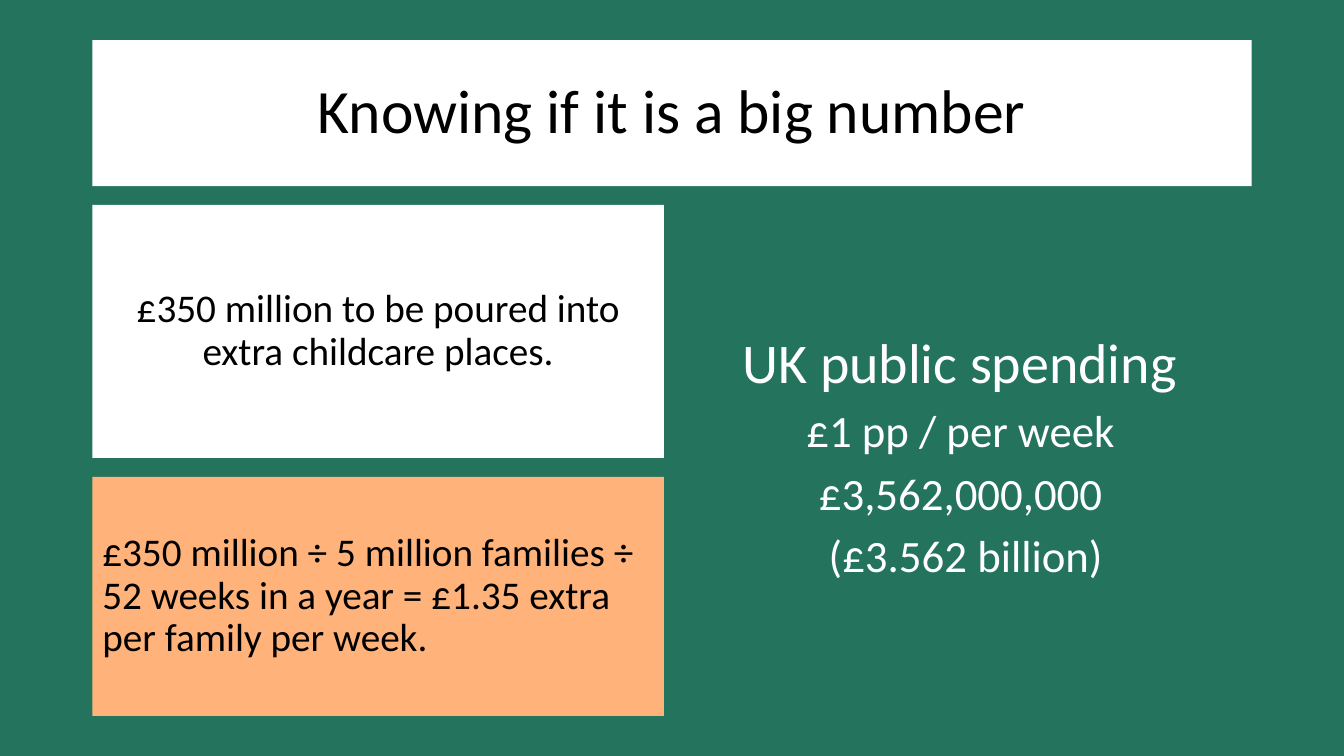
from collections import namedtuple
from dataclasses import dataclass

from lxml import etree
from pptx import Presentation, util as u
from pptx.dml.color import RGBColor
from pptx.enum import text as t
from pptx.oxml.ns import qn

Box = namedtuple("Box", "left top width height")


@dataclass(frozen=True)
class Theme:
    green: str = "23735D"
    orange: str = "FFB37A"
    white: str = "FFFFFF"
    black: str = "000000"
    font: str = "Calibri"
    title: int = 44
    head: int = 40
    figure: int = 32
    body: int = 28


THEME = Theme()


def apply(item, values):
    """Set each named attribute of item."""
    for name, value in values.items():
        setattr(item, name, value)


def paint(fill, tone):
    fill.solid()
    fill.fore_color.rgb = RGBColor.from_string(tone)


def place(shape, box, tone):
    """Move a shape to box (in cm), fill it and centre its text vertically."""
    apply(shape, {name: u.Cm(size) for name, size in box._asdict().items()})
    paint(shape.fill, tone)
    apply(shape.text_frame, {
        "word_wrap": True,
        "auto_size": t.MSO_AUTO_SIZE.NONE,
        "vertical_anchor": t.MSO_ANCHOR.MIDDLE,
    })


def write(frame, lines, ink, align=t.PP_ALIGN.CENTER):
    """Fill a frame with unbulleted (words, size) lines."""
    for i, (words, size) in enumerate(lines):
        para = frame.add_paragraph() if i else frame.paragraphs[0]
        para.text = words
        apply(para, {
            "alignment": align,
            "line_spacing": 0.9,
            "space_before": u.Pt(10 if i else 0),
            "space_after": u.Pt(0),
        })
        props = para._p.get_or_add_pPr()
        apply_indent = {"marL": "0", "indent": "0"}
        for name, value in apply_indent.items():
            props.set(name, value)
        etree.SubElement(props, qn("a:buNone"))
        font = para.runs[0].font
        apply(font, {"name": THEME.font, "size": u.Pt(size), "bold": False})
        font.color.rgb = RGBColor.from_string(ink)


def banner(slide, box):
    title = slide.shapes.title
    place(title, box, THEME.white)
    write(title.text_frame,
          [("Knowing if it is a big number", THEME.title)], THEME.black)


def claim(slide, box):
    body = slide.placeholders[1]
    place(body, box, THEME.white)
    write(body.text_frame,
          [("£350 million to be poured into extra childcare places.",
            THEME.body)], THEME.black)


def working(slide, box):
    note = slide.shapes.add_textbox(0, 0, 0, 0)
    place(note, box, THEME.orange)
    write(note.text_frame,
          [("£350 million ÷ 5 million families ÷ 52 weeks in a year = "
            "£1.35 extra per family per week.", THEME.body)],
          THEME.black, t.PP_ALIGN.LEFT)


def spending(slide, box):
    body = slide.placeholders[2]
    place(body, box, THEME.green)
    write(body.text_frame, [
        ("UK public spending ", THEME.head),
        ("£1 pp / per week ", THEME.figure),
        ("£3,562,000,000 ", THEME.figure),
        ("(£3.562 billion)", THEME.figure),
    ], THEME.white)


def main():
    deck = Presentation()
    apply(deck, {"slide_width": u.Cm(33.87), "slide_height": u.Cm(19.05)})
    slide = deck.slides.add_slide(deck.slide_layouts[3])
    paint(slide.background.fill, THEME.green)

    left, wide, col = 2.33, 29.21, 14.4
    right = left + wide - col
    spending(slide, Box(right, 5.08, col, 12.95))
    working(slide, Box(left, 12.02, col, 6.02))
    claim(slide, Box(left, 5.16, col, 6.38))
    banner(slide, Box(left, 1.01, wide, 3.68))
    deck.save("out.pptx")


if __name__ == "__main__":
    main()
